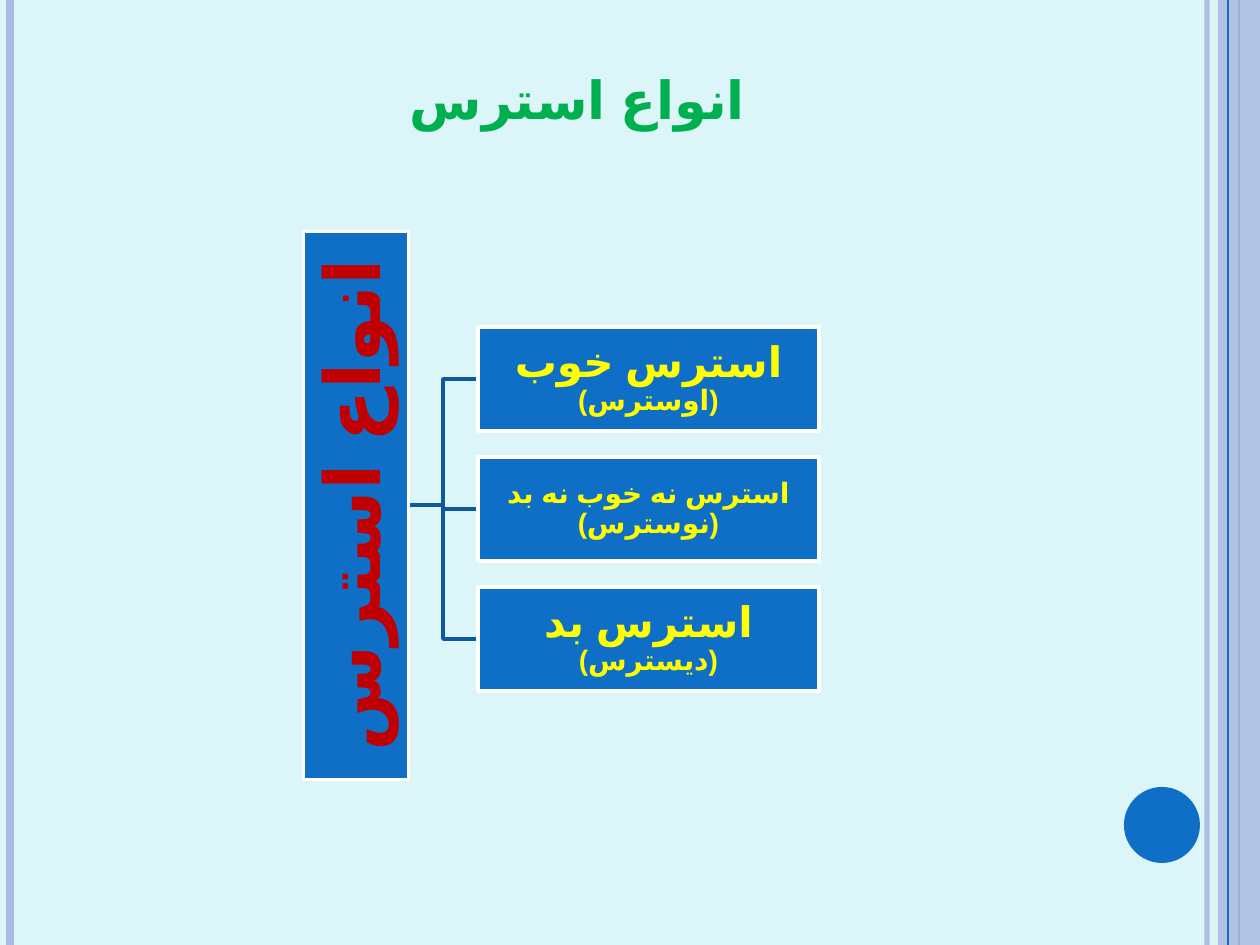
from dataclasses import dataclass

from lxml.etree import SubElement
from pptx import Presentation
from pptx.dml.color import RGBColor
from pptx.enum.lang import MSO_LANGUAGE_ID
from pptx.enum.shapes import MSO_CONNECTOR, MSO_SHAPE
from pptx.enum.text import MSO_ANCHOR, PP_ALIGN
from pptx.oxml.ns import qn
from pptx.shapes.autoshape import Shape
from pptx.slide import Slide
from pptx.text.text import TextFrame
from pptx.util import Pt

EMU_PER_PX = 914400 / 126
PAGE_WIDTH, PAGE_HEIGHT = 1260, 945
FONT = "Arial"

BACKGROUND = RGBColor(0xDB, 0xF5, 0xF9)
LAVENDER = RGBColor(0xAB, 0xBB, 0xDF)
BLUE = RGBColor(0x0F, 0x6F, 0xC6)
DARK_BLUE = RGBColor(0x0C, 0x59, 0x9F)
GREEN = RGBColor(0x00, 0xB0, 0x50)
RED = RGBColor(0xC0, 0x00, 0x00)
YELLOW = RGBColor(0xFF, 0xFF, 0x00)
WHITE = RGBColor(0xFF, 0xFF, 0xFF)


@dataclass(frozen=True)
class Area:
    left: int
    top: int
    width: int
    height: int


@dataclass(frozen=True)
class Stripe:
    x: int
    color: RGBColor
    weight: float
    opacity: int = 100


@dataclass(frozen=True)
class Words:
    text: str
    size: int


@dataclass(frozen=True)
class Branch:
    words: tuple[Words, ...]
    inset: int


BACK_STRIPES = (
    Stripe(1207, LAVENDER, 3, 93),
    Stripe(10, LAVENDER, 4.5),
    Stripe(1239, BLUE, 1.5),
)
FRONT_STRIPE = Stripe(1228, BLUE, 0.75)
SIDE_BAND = Area(1218, 0, 42, PAGE_HEIGHT)
DISC = Area(1124, 787, 76, 76)
TITLE_AREA = Area(63, 38, 1029, 98)

ROOT_AREA = Area(82, 453, 548, 105)
ROOT_RIGHT, ROOT_MIDDLE = 409, 505
BRANCH_LEFT, BRANCH_TOP, BRANCH_PITCH = 478, 327, 130
BRANCH_WIDTH, BRANCH_HEIGHT = 341, 104
BRANCHES = (
    Branch((Words("استرس خوب ", 24), Words("(اوسترس)", 16)), 3),
    Branch((Words("استرس نه خوب نه بد (نوسترس)", 16),), 1),
    Branch((Words("استرس بد ", 24), Words("(دیسترس)", 16)), 3),
)


def px(length: float) -> int:
    """Turn pixels into EMU."""
    return round(length * EMU_PER_PX)


def place(shape: Shape, area: Area) -> None:
    """Move and size a shape."""
    shape.left, shape.top = px(area.left), px(area.top)
    shape.width, shape.height = px(area.width), px(area.height)


def set_opacity(element, percent: int) -> None:
    """Give the first plain colour under an element its opacity."""
    color = next(element.iter(qn("a:srgbClr")))
    SubElement(color, qn("a:alpha")).set("val", str(percent * 1000))


def draw_stripe(page: Slide, stripe: Stripe) -> None:
    """Draw a vertical line over the full page height."""
    x = px(stripe.x)
    line = page.shapes.add_connector(
        MSO_CONNECTOR.STRAIGHT, x, 0, x, px(PAGE_HEIGHT)
    )
    line.line.color.rgb = stripe.color
    line.line.width = Pt(stripe.weight)
    properties = line._element.spPr
    if stripe.opacity < 100:
        set_opacity(properties, stripe.opacity)
    SubElement(properties, qn("a:effectLst"))


def draw_shape(
    page: Slide,
    kind: MSO_SHAPE,
    area: Area,
    fill: RGBColor,
    outline: RGBColor | None = None,
) -> Shape:
    """Draw a filled preset shape, outlined if a colour is given."""
    shape = page.shapes.add_shape(kind, 0, 0, 0, 0)
    place(shape, area)
    shape.shadow.inherit = False
    shape.fill.solid()
    shape.fill.fore_color.rgb = fill
    if outline is None:
        shape.line.fill.background()
    else:
        shape.line.color.rgb = outline
        shape.line.width = Pt(2)
    return shape


def write(
    frame: TextFrame,
    text: str,
    *,
    size: int,
    color: RGBColor,
    small_caps: bool = False,
    line_spacing: float = 0.9,
) -> None:
    """Add bold, centred, right-to-left Persian text to the first paragraph."""
    para = frame.paragraphs[0]
    para.alignment = PP_ALIGN.CENTER
    para.line_spacing = line_spacing
    para._p.get_or_add_pPr().set("rtl", "1")
    span = para.add_run()
    span.text = text
    span.font.size = Pt(size)
    span.font.bold = True
    span.font.language_id = MSO_LANGUAGE_ID.FARSI
    span.font.color.rgb = color
    span.font.name = FONT
    properties = span._r.get_or_add_rPr()
    SubElement(properties, qn("a:cs")).set("typeface", FONT)
    if small_caps:
        properties.set("cap", "small")


def draw_node(
    page: Slide, area: Area, words: tuple[Words, ...], color: RGBColor, inset: int
) -> Shape:
    """Draw a labelled box of the hierarchy."""
    box = draw_shape(page, MSO_SHAPE.RECTANGLE, area, BLUE, WHITE)
    frame = box.text_frame
    frame.word_wrap = True
    frame.vertical_anchor = MSO_ANCHOR.MIDDLE
    frame.margin_left = frame.margin_right = px(inset)
    frame.margin_top = frame.margin_bottom = px(inset)
    for part in words:
        write(frame, part.text, size=part.size, color=color)
    return box


def draw_link(page: Slide, end_y: int) -> None:
    """Draw a bent line from the root to a branch."""
    bend = (ROOT_RIGHT + BRANCH_LEFT) // 2
    points = [(bend, ROOT_MIDDLE), (bend, end_y), (BRANCH_LEFT, end_y)]
    builder = page.shapes.build_freeform(px(ROOT_RIGHT), px(ROOT_MIDDLE))
    builder.add_line_segments([(px(x), px(y)) for x, y in points], close=False)
    link = builder.convert_to_shape()
    link.shadow.inherit = False
    link.fill.background()
    link.line.color.rgb = DARK_BLUE
    link.line.width = Pt(2)


def draw_frame(page: Slide) -> None:
    """Draw the background, the side stripes and the disc."""
    page.background.fill.solid()
    page.background.fill.fore_color.rgb = BACKGROUND
    for stripe in BACK_STRIPES:
        draw_stripe(page, stripe)
    band = draw_shape(page, MSO_SHAPE.RECTANGLE, SIDE_BAND, LAVENDER)
    set_opacity(band._element.spPr, 87)
    draw_stripe(page, FRONT_STRIPE)
    draw_shape(page, MSO_SHAPE.OVAL, DISC, BLUE)


def draw_title(page: Slide) -> None:
    """Place and write the title."""
    title = page.shapes.title
    place(title, TITLE_AREA)
    frame = title.text_frame
    frame.word_wrap = True
    frame.vertical_anchor = MSO_ANCHOR.BOTTOM
    write(frame, "انواع استرس", size=30, color=GREEN, small_caps=True, line_spacing=1.0)


def draw_hierarchy(page: Slide) -> None:
    """Draw the links, the upright root and its branches."""
    tops = [BRANCH_TOP + BRANCH_PITCH * row for row in range(len(BRANCHES))]
    for top in reversed(tops):
        draw_link(page, top + BRANCH_HEIGHT // 2)
    root = draw_node(page, ROOT_AREA, (Words("انواع استرس", 44),), RED, 4)
    root.rotation = 270
    for top, branch in zip(tops, BRANCHES):
        area = Area(BRANCH_LEFT, top, BRANCH_WIDTH, BRANCH_HEIGHT)
        draw_node(page, area, branch.words, YELLOW, branch.inset)


def main() -> None:
    """Build and save the deck."""
    deck = Presentation()
    deck.slide_width, deck.slide_height = px(PAGE_WIDTH), px(PAGE_HEIGHT)
    page = deck.slides.add_slide(deck.slide_layouts[5])
    draw_frame(page)
    draw_title(page)
    draw_hierarchy(page)
    deck.save("out.pptx")


if __name__ == "__main__":
    main()
